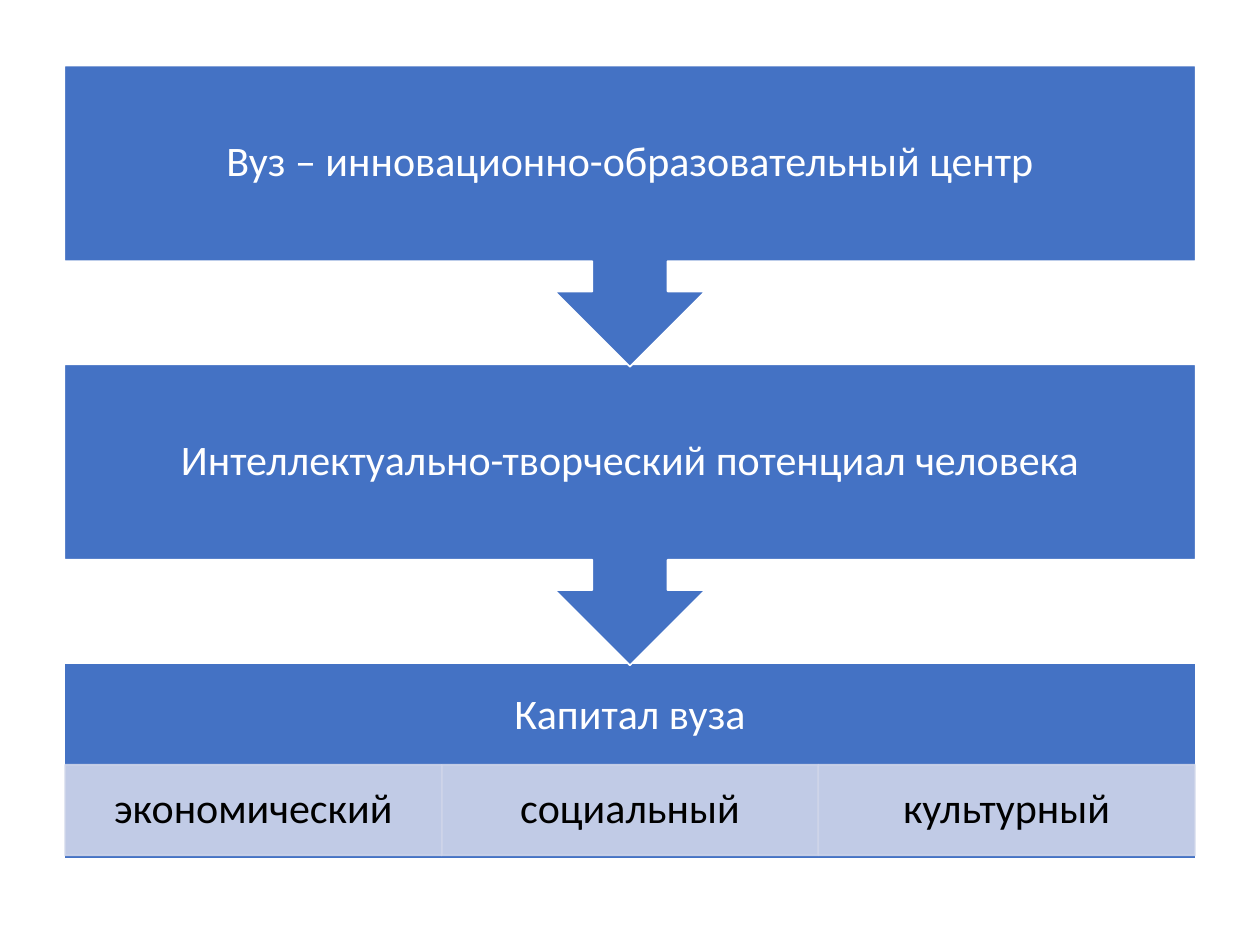
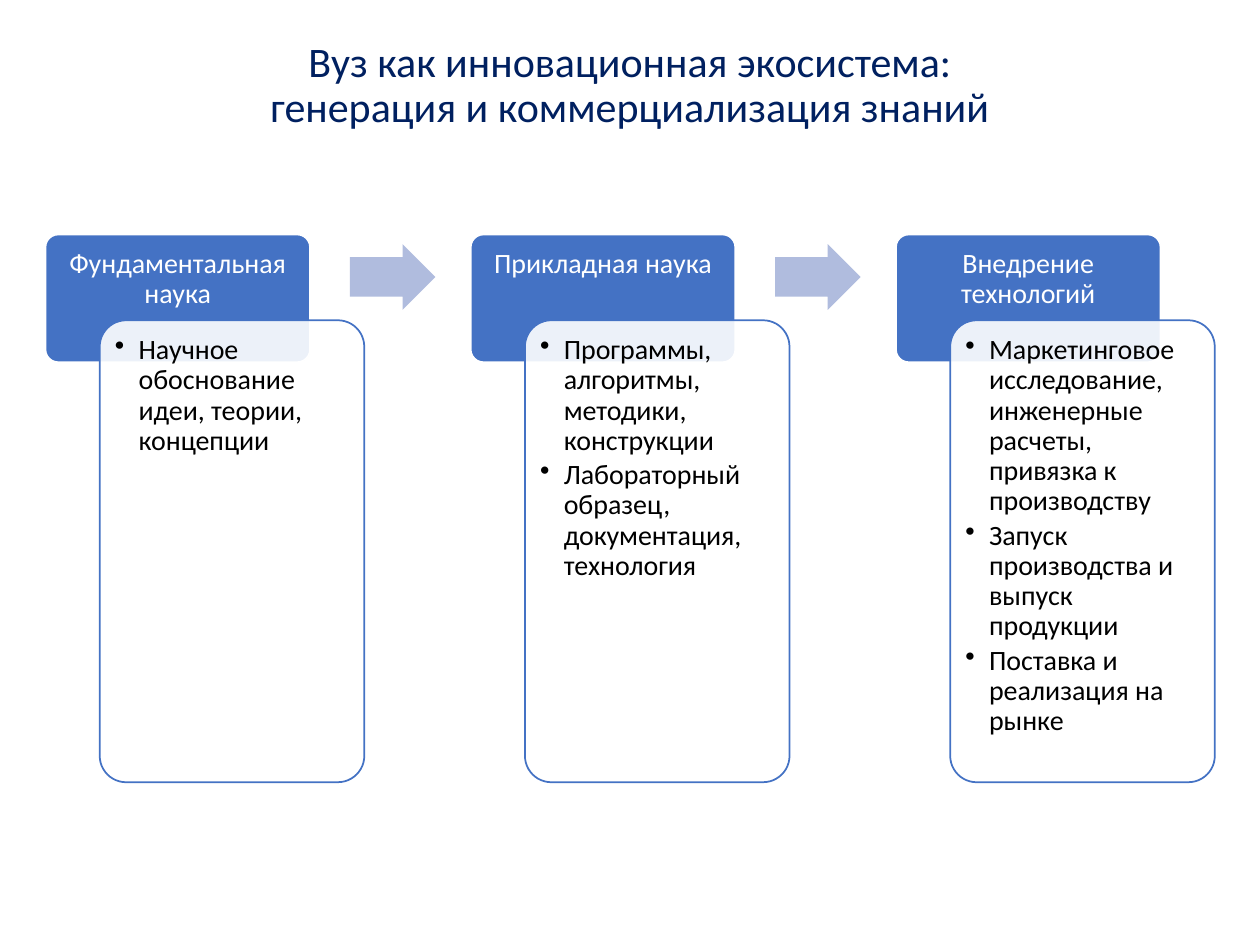
"""Build two slides on the university as an innovation centre."""
from dataclasses import dataclass
from lxml.etree import SubElement
from pptx import Presentation
from pptx.dml.color import RGBColor
from pptx.enum.shapes import MSO_SHAPE as KIND
from pptx.enum.text import MSO_ANCHOR, MSO_AUTO_SIZE, PP_ALIGN
from pptx.oxml.ns import qn
from pptx.util import Pt

STEPS = ["Вуз – инновационно-образовательный центр",
         "Интеллектуально-творческий потенциал человека"]
BASE = "Капитал вуза"
PARTS = ["экономический", "социальный", "культурный"]

TITLE = ["Вуз как инновационная экосистема:",
         "генерация и коммерциализация знаний"]
STAGES = [
    ("Фундаментальная наука",
     ["Научное обоснование идеи, теории, концепции"]),
    ("Прикладная наука",
     ["Программы, алгоритмы, методики, конструкции",
      "Лабораторный образец, документация, технология"]),
    ("Внедрение технологий",
     ["Маркетинговое исследование, инженерные расчеты, привязка к производству",
      "Запуск производства и выпуск продукции",
      "Поставка и реализация на рынке"]),
]


@dataclass(frozen=True)
class Theme:
    """Colours, font and type sizes."""
    blue: str = "4472C4"
    pale: str = "CFD5EA"
    arrow: str = "B0BCDE"
    navy: str = "002060"
    white: str = "FFFFFF"
    black: str = "000000"
    font: str = "Calibri"
    large: int = 24
    small: int = 16


LOOK = Theme()
LEFT, WIDE = 36.72, 646.56


def fade(fill):
    """Make a solid fill 90% opaque."""
    tint = fill._xPr.find(qn("a:solidFill"))[0]
    SubElement(tint, qn("a:alpha"), val="90000")


def shape(slide, kind, box, fill, line=None, clear=()):
    """Add a flat shape; clear names which of fill and line are faded."""
    item = slide.shapes.add_shape(kind, *map(Pt, box))
    item.shadow.inherit = False
    item.fill.solid()
    item.fill.fore_color.rgb = RGBColor.from_string(fill)
    if line:
        item.line.color.rgb = RGBColor.from_string(line)
        item.line.width = Pt(1)
    else:
        item.line.fill.background()
    if "fill" in clear:
        fade(item.fill)
    if "line" in clear:
        fade(item.line.fill)
    return item


def bullet(para):
    """Give a paragraph a hanging bullet."""
    props = para._p.get_or_add_pPr()
    props.set("marL", str(Pt(13.5)))
    props.set("indent", str(Pt(-13.5)))
    SubElement(props, qn("a:buChar"), char="•")


def write(item, lines, size, color, pads=None, top=False, dots=False):
    """Write lines into a shape; pads are left, top, right, bottom."""
    frame = item.text_frame
    frame.word_wrap = True
    frame.auto_size = MSO_AUTO_SIZE.NONE
    frame.vertical_anchor = MSO_ANCHOR.TOP if top else MSO_ANCHOR.MIDDLE
    if pads:
        (frame.margin_left, frame.margin_top,
         frame.margin_right, frame.margin_bottom) = map(Pt, pads)
    for i, line in enumerate(lines):
        para = frame.add_paragraph() if i else frame.paragraphs[0]
        para.alignment = PP_ALIGN.LEFT if dots else PP_ALIGN.CENTER
        para.line_spacing = 0.9
        para.space_before = Pt(0)
        if dots:
            para.space_after = Pt(size * 0.15)
            bullet(para)
        run = para.add_run()
        run.text = line
        run.font.name = LOOK.font
        run.font.size = Pt(size)
        run.font.color.rgb = RGBColor.from_string(color)


def flow(deck):
    """Draw the downward flow to the split base."""
    slide = deck.slides.add_slide(deck.slide_layouts[6])
    top, step, tall, pad = 37.44, 170.64, 172.08, 13.7
    head, low = 60.5, 112.32
    end = top + step * len(STEPS)
    base = shape(slide, KIND.RECTANGLE, (LEFT, end, WIDE, low),
                 LOOK.blue, LOOK.white)
    write(base, [BASE], LOOK.large, LOOK.white,
          (pad, pad, pad, low - head + pad))
    cell = (WIDE - 1) / len(PARTS)
    for i, name in enumerate(PARTS):
        part = shape(slide, KIND.RECTANGLE,
                     (LEFT + 0.5 + i * cell, end + 58.3, cell, 51.8),
                     LOOK.pale, LOOK.pale, ("fill", "line"))
        write(part, [name], LOOK.large, LOOK.black, (pad, 2, pad, 2))
    for i, name in reversed(list(enumerate(STEPS))):
        call = shape(slide, KIND.DOWN_ARROW_CALLOUT,
                     (LEFT, top + i * step, WIDE, tall),
                     LOOK.blue, LOOK.white)
        write(call, [name], LOOK.large, LOOK.white, (pad,) * 4)


def chain(deck):
    """Draw the stages from left to right with their lists."""
    slide = deck.slides.add_slide(deck.slide_layouts[5])
    title = slide.shapes.title
    title.left, title.top, title.width, title.height = map(
        Pt, (LEFT, 20.9, WIDE, 56.9))
    write(title, TITLE, LOOK.large, LOOK.navy)
    left, top, step, wide = 26, 134, 243, 151.2
    for i, (name, notes) in enumerate(STAGES):
        x = left + i * step
        head = shape(slide, KIND.ROUNDED_RECTANGLE, (x, top, wide, 73),
                     LOOK.blue, LOOK.white)
        head.adjustments[0] = 0.1
        write(head, [name], LOOK.small, LOOK.white, (6.5, 6.5, 6.5, 5), True)
        card = shape(slide, KIND.ROUNDED_RECTANGLE,
                     (x + 31, top + 49, wide, 264),
                     LOOK.white, LOOK.blue, ("fill",))
        card.adjustments[0] = 0.1
        write(card, notes, LOOK.small, LOOK.black, (4.3,) * 4, True, True)
        if i < len(STAGES) - 1:
            link = shape(slide, KIND.RIGHT_ARROW,
                         (x + 174, top + 5.5, 48.8, 37.6), LOOK.arrow)
            link.adjustments[0] = 0.6


def main():
    """Build and save the deck."""
    deck = Presentation()
    deck.slide_width, deck.slide_height = Pt(720), Pt(540)
    flow(deck)
    chain(deck)
    deck.save("out.pptx")


if __name__ == "__main__":
    main()
